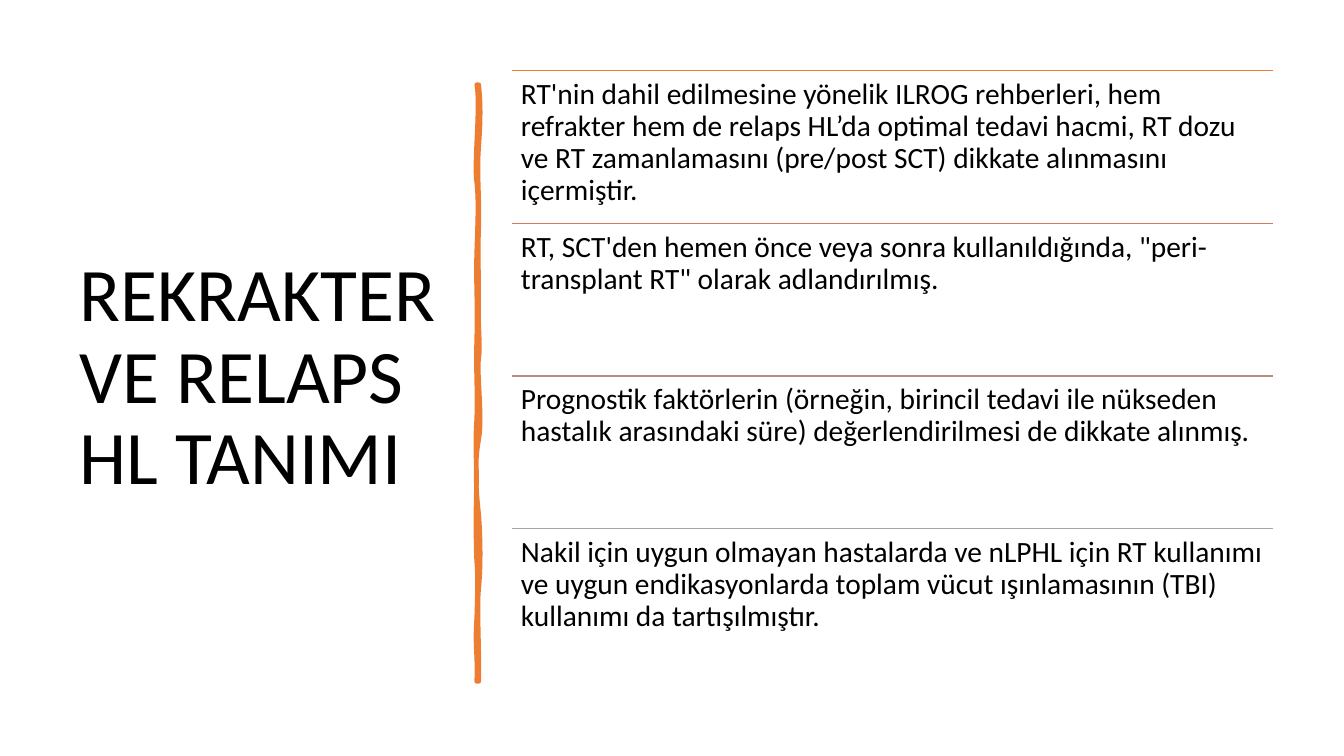
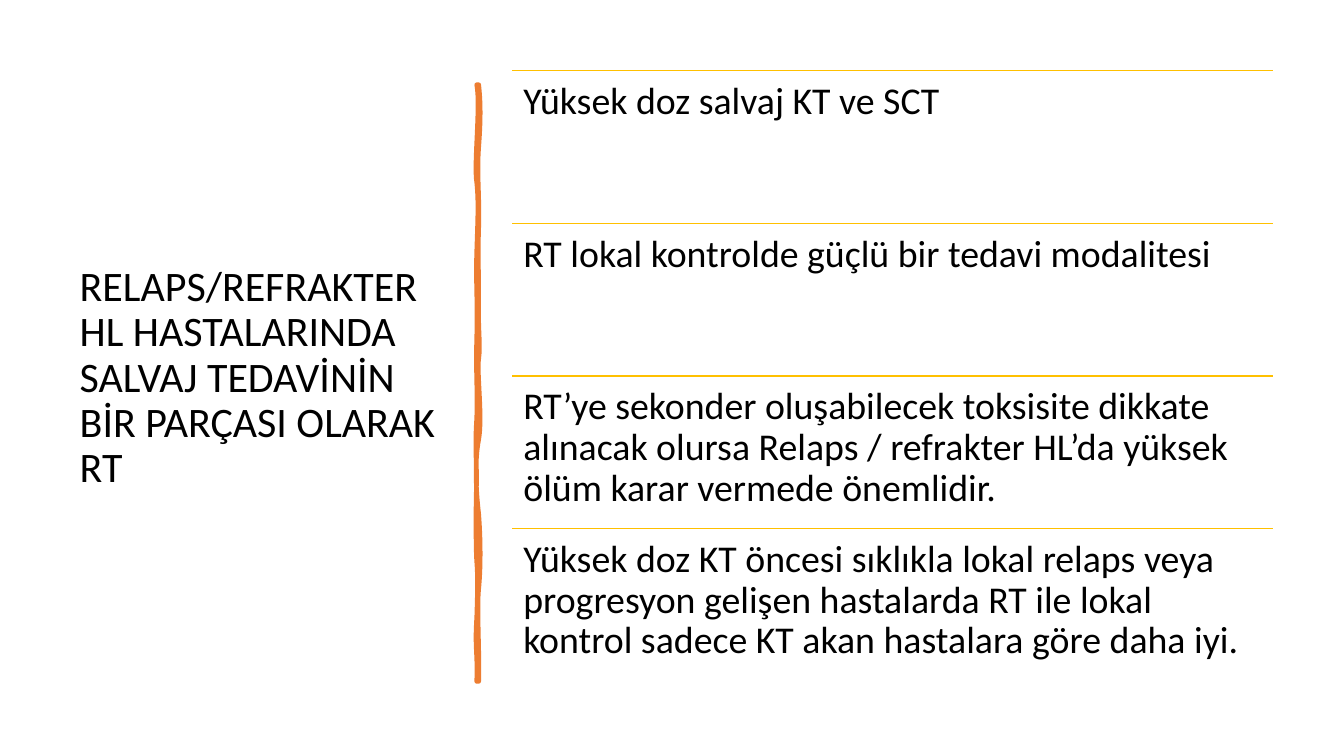
import copy
from dataclasses import dataclass

import pptx
import pptx.dml.color
import pptx.enum.shapes
import pptx.enum.text
import pptx.oxml
import pptx.oxml.ns
import pptx.presentation
import pptx.shapes.autoshape
import pptx.slide
import pptx.util

Cm = pptx.util.Cm
Pt = pptx.util.Pt
qn = pptx.oxml.ns.qn
A_NS = pptx.oxml.ns.nsdecls("a")


@dataclass(frozen=True)
class Theme:
    font: str = "Calibri"
    text: str = "000000"
    brush: str = "ED7D31"
    yellow: str = "FFC000"
    fade: tuple[str, ...] = ("ED7D31", "D17B5C", "B98A82", "A5A5A5")
    title_large: int = 54
    title_small: int = 30
    body_small: int = 21
    body_large: int = 27
    rule_width: float = 1
    brush_width: float = 3.25
    line_spacing: float = 0.9


@dataclass(frozen=True)
class Box:
    left: float
    top: float
    width: float
    height: float


@dataclass(frozen=True)
class Row:
    text: str
    color: str


@dataclass(frozen=True)
class Content:
    title: str
    title_size: int
    body_size: int
    inset: float
    rows: tuple[Row, ...]


@dataclass(frozen=True)
class Curve:
    """A cubic curve: two control points and an end point."""
    x1: int
    y1: int
    x2: int
    y2: int
    x: int
    y: int


THEME = Theme()
TITLE_BOX = Box(1.76, 1.78, 9.5, 15.52)
ROWS_BOX = Box(12.91, 1.78, 19.18, 15.38)

# Brush stroke, in hundredths of an inch
BRUSH_UNIT = Cm(0.0254)
BRUSH_START = (475, 84)
BRUSH_END = (Curve(474, 676, 473, 676, 473, 676),)
BRUSH_CLOSE = (Curve(474, 84, 474, 84, 475, 84),)
BRUSH_EDGE = (
    Curve(477, 102, 477, 119, 475, 146), Curve(473, 173, 476, 195, 475, 226),
    Curve(474, 257, 475, 262, 475, 294), Curve(474, 325, 477, 342, 475, 356),
    Curve(473, 370, 479, 414, 475, 436), Curve(471, 457, 472, 484, 475, 510),
    Curve(477, 536, 477, 564, 475, 584), Curve(473, 603, 476, 650, 475, 676),
    *BRUSH_END,
    Curve(474, 646, 471, 644, 473, 613), Curve(474, 583, 474, 570, 473, 557),
    Curve(472, 544, 472, 495, 473, 477), Curve(473, 459, 471, 445, 473, 415),
    Curve(474, 386, 472, 373, 473, 335), Curve(474, 298, 472, 281, 473, 250),
    Curve(474, 218, 475, 200, 473, 181), Curve(470, 163, 477, 104, 473, 84),
    *BRUSH_CLOSE,
)
BRUSH_BODY = (
    Curve(475, 115, 472, 125, 475, 152), Curve(477, 179, 474, 197, 475, 208),
    Curve(476, 220, 474, 255, 475, 294), Curve(476, 333, 473, 343, 475, 362),
    Curve(477, 381, 477, 397, 475, 430), Curve(472, 463, 475, 474, 475, 516),
    Curve(475, 557, 474, 553, 475, 578), Curve(476, 603, 474, 647, 475, 676),
    *BRUSH_END,
    Curve(470, 649, 474, 632, 473, 613), Curve(472, 595, 475, 569, 473, 539),
    Curve(471, 510, 476, 500, 473, 471), Curve(470, 442, 477, 420, 473, 386),
    Curve(469, 351, 474, 325, 473, 300), Curve(471, 275, 471, 259, 473, 238),
    Curve(474, 216, 474, 185, 473, 164), Curve(471, 143, 475, 121, 473, 84),
    *BRUSH_CLOSE,
)

SLIDES = (
    Content(
        "REKRAKTER VE RELAPS HL TANIMI",
        THEME.title_large, THEME.body_small, 0.22,
        tuple(Row(text, color) for text, color in zip((
            "RT'nin dahil edilmesine yönelik ILROG rehberleri, hem refrakter hem de relaps HL’da "
            "optimal tedavi hacmi, RT dozu ve RT zamanlamasını (pre/post SCT) dikkate alınmasını "
            "içermiştir.",
            "RT, SCT'den hemen önce veya sonra kullanıldığında, \"peri-transplant RT\" olarak "
            "adlandırılmış.",
            "Prognostik faktörlerin (örneğin, birincil tedavi ile nükseden hastalık arasındaki "
            "süre) değerlendirilmesi de dikkate alınmış.",
            "Nakil için uygun olmayan hastalarda ve nLPHL için RT kullanımı ve uygun "
            "endikasyonlarda toplam vücut ışınlamasının (TBI) kullanımı da tartışılmıştır.",
        ), THEME.fade)),
    ),
    Content(
        "RELAPS/REFRAKTER HL HASTALARINDA SALVAJ TEDAVİNİN BİR PARÇASI OLARAK RT",
        THEME.title_small, THEME.body_large, 0.28,
        tuple(Row(text, THEME.yellow) for text in (
            "Yüksek doz salvaj KT ve SCT",
            "RT lokal kontrolde güçlü bir tedavi modalitesi",
            "RT’ye sekonder oluşabilecek toksisite dikkate alınacak olursa Relaps / refrakter "
            "HL’da yüksek ölüm karar vermede önemlidir.",
            "Yüksek doz KT öncesi sıklıkla lokal relaps veya progresyon gelişen hastalarda RT ile "
            "lokal kontrol sadece KT akan hastalara göre daha iyi.",
        )),
    ),
)


def rgb(color: str) -> pptx.dml.color.RGBColor:
    return pptx.dml.color.RGBColor.from_string(color)


def add_text(s: pptx.slide.Slide, box: Box, text: str, *, size: int,
             inset_x: float, inset_y: float, middle: bool = False) -> None:
    sp = s.shapes.add_textbox(Cm(box.left), Cm(box.top), Cm(box.width), Cm(box.height))
    tf = sp.text_frame
    tf.word_wrap = True
    tf.margin_left = tf.margin_right = Cm(inset_x)
    tf.margin_top = tf.margin_bottom = Cm(inset_y)
    anchor = pptx.enum.text.MSO_ANCHOR
    tf.vertical_anchor = anchor.MIDDLE if middle else anchor.TOP
    p = tf.paragraphs[0]
    p.line_spacing = THEME.line_spacing
    r = p.add_run()
    r.text = text
    r.font.name = THEME.font
    r.font.size = Pt(size)
    r.font.color.rgb = rgb(THEME.text)


def add_rule(s: pptx.slide.Slide, left: float, top: float, width: float, color: str) -> None:
    rule = s.shapes.add_connector(pptx.enum.shapes.MSO_CONNECTOR.STRAIGHT,
                                  Cm(left), Cm(top), Cm(left + width), Cm(top))
    rule.line.color.rgb = rgb(color)
    rule.line.width = Pt(THEME.rule_width)
    rule.element.spPr.append(pptx.oxml.parse_xml(f"<a:effectLst {A_NS}/>"))


def control_points(curves: tuple[Curve, ...]) -> list[tuple[int, int]]:
    return [point for c in curves for point in ((c.x1, c.y1), (c.x2, c.y2), (c.x, c.y))]


def bend_outline(sp: pptx.shapes.autoshape.Shape) -> None:
    """Turn each three line segments into one cubic curve, and part the edge from the body."""
    edge = next(sp.element.iter(qn("a:path")))
    segments = edge.findall(qn("a:lnTo"))
    for i in range(0, len(segments), 3):
        curve = pptx.oxml.parse_xml(f"<a:cubicBezTo {A_NS}/>")
        edge.replace(segments[i], curve)
        for segment in segments[i:i + 3]:
            curve.append(segment[0])
        for segment in segments[i + 1:i + 3]:
            edge.remove(segment)

    body = copy.deepcopy(edge)
    edge.addnext(body)
    edge_size = len(BRUSH_EDGE) + 2  # the curves, a move and a close
    for child in list(edge)[edge_size:]:
        edge.remove(child)
    for child in list(body)[:edge_size]:
        body.remove(child)
    edge.set("fill", "none")
    body.set("stroke", "0")


def add_brush_stroke(s: pptx.slide.Slide) -> None:
    builder = s.shapes.build_freeform(*BRUSH_START, scale=BRUSH_UNIT)
    builder.add_line_segments(control_points(BRUSH_EDGE), close=True)
    builder.move_to(*BRUSH_START)
    builder.add_line_segments(control_points(BRUSH_BODY), close=True)
    sp = builder.convert_to_shape()
    bend_outline(sp)
    sp.shadow.inherit = False
    sp.fill.solid()
    sp.fill.fore_color.rgb = rgb(THEME.brush)
    sp.line.color.rgb = rgb(THEME.brush)
    sp.line.width = Pt(THEME.brush_width)
    ln = sp.element.spPr.find(qn("a:ln"))
    ln.set("cap", "rnd")
    ln.append(pptx.oxml.parse_xml(f"<a:round {A_NS}/>"))


def add_content_slide(prs: pptx.presentation.Presentation, content: Content) -> None:
    s = prs.slides.add_slide(prs.slide_layouts[6])
    add_text(s, TITLE_BOX, content.title, size=content.title_size,
             inset_x=0.25, inset_y=0.13, middle=True)
    add_brush_stroke(s)
    height = ROWS_BOX.height / len(content.rows)
    for i, row in enumerate(content.rows):
        box = Box(ROWS_BOX.left, ROWS_BOX.top + i * height, ROWS_BOX.width, height)
        add_rule(s, box.left, box.top, box.width, row.color)
        add_text(s, box, row.text, size=content.body_size,
                 inset_x=content.inset, inset_y=content.inset)


def main() -> None:
    prs = pptx.Presentation()
    prs.slide_width, prs.slide_height = Cm(33.87), Cm(19.05)
    for content in SLIDES:
        add_content_slide(prs, content)
    prs.save("out.pptx")


if __name__ == "__main__":
    main()
